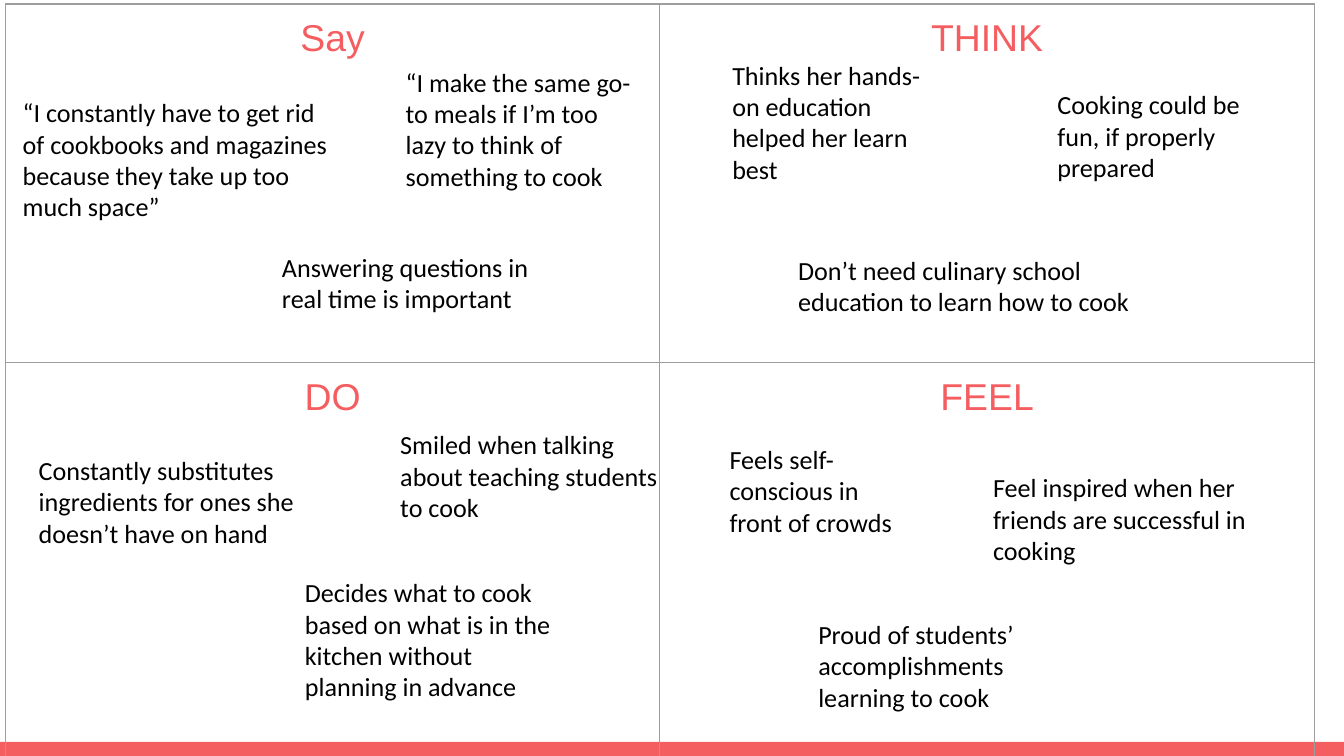
from lxml.etree import SubElement
from pptx import Presentation
from pptx.dml.color import RGBColor
from pptx.enum.shapes import MSO_SHAPE as Shape
from pptx.enum.text import PP_ALIGN as Align
from pptx.oxml.ns import qn
from pptx.util import Inches, Pt

CORAL = RGBColor(0xF5, 0x5E, 0x61)
BLACK = RGBColor(0, 0, 0)
GREY = RGBColor(0x9E, 0x9E, 0x9E)

WIDTH = Inches(10)
HEIGHT = WIDTH * 9 // 16
COLUMN, ROW = WIDTH / 100, HEIGHT / 56.25
MARGIN = Inches(0.1)
MAP_LEFT, MAP_TOP = 0.4, 0.3
MAP_COLUMNS = (48.7, 48.7)
MAP_ROWS = (26.7, 29.8)

QUADRANTS = [
    [
        ("Say", [
            ((19.6, 17.4, 20.7, 6.5), "Answering questions in real time is important"),
            ((0.3, 5.9, 25.2, 11), "“I constantly have to get rid of cookbooks and magazines "
             "because they take up too much space”"),
            ((28.8, 3.6, 19, 6.5), "“I make the same go-to meals if I’m too lazy to think of "
             "something to cook"),
        ]),
        ("THINK", [
            ((9.3, 17.6, 30.7, 8), "Don’t need culinary school education to learn how to cook"),
            ((28.6, 5.3, 19, 3.3), "Cooking could be fun, if properly prepared"),
            ((4.4, 3.1, 16.8, 8), "Thinks her hands-on education helped her learn best"),
        ]),
    ],
    [
        ("DO", [
            ((28.4, 3.9, 21.7, 9.7), "Smiled when talking about teaching students to cook"),
            ((21.3, 14.9, 20.7, 14.4), "Decides what to cook based on what is in the kitchen "
             "without planning in advance"),
            ((1.5, 5.8, 22.6, 9.7), "Constantly substitutes ingredients for ones she doesn’t "
             "have on hand"),
        ]),
        ("FEEL", [
            ((23.8, 7.1, 25.2, 9.7), "Feel inspired when her friends are successful in cooking"),
            ((10.8, 18, 20.7, 9.7), "Proud of students’ accomplishments learning to cook"),
            ((4.2, 5, 15.3, 8), "Feels self-conscious in front of crowds"),
        ]),
    ],
]


def grid_box(left, top, width, height):
    return (round(left * COLUMN), round(top * ROW),
            round(width * COLUMN), round(height * ROW))


def set_margins(holder):
    holder.margin_left = holder.margin_right = MARGIN
    holder.margin_top = holder.margin_bottom = MARGIN


def style_font(font, name, size, color):
    font.name = name
    font.size = Pt(size)
    font.color.rgb = color


def add_footer(slide, box):
    shape = slide.shapes.add_shape(Shape.RECTANGLE, *grid_box(*box))
    shape.shadow.inherit = False
    shape.fill.solid()
    shape.fill.fore_color.rgb = CORAL
    shape.line.fill.background()


def add_borders(cell):
    properties = cell._tc.get_or_add_tcPr()
    for side in ("lnL", "lnR", "lnT", "lnB"):
        line = SubElement(properties, qn(f"a:{side}"), w=str(Pt(0.75)))
        fill = SubElement(line, qn("a:solidFill"))
        SubElement(fill, qn("a:srgbClr"), val=str(GREY))


def format_heading(cell, heading):
    add_borders(cell)
    cell.fill.background()
    set_margins(cell)
    cell.text = heading
    paragraph = cell.text_frame.paragraphs[0]
    paragraph.alignment = Align.CENTER
    style_font(paragraph.font, "Arial", 20, CORAL)


def add_map_table(slide, left, top):
    box = grid_box(left, top, sum(MAP_COLUMNS), sum(MAP_ROWS))
    table = slide.shapes.add_table(len(MAP_ROWS), len(MAP_COLUMNS), *box).table
    table.first_row = table.horz_banding = False
    for column, width in zip(table.columns, MAP_COLUMNS):
        column.width = round(width * COLUMN)
    for row, height, quadrants in zip(table.rows, MAP_ROWS, QUADRANTS):
        row.height = round(height * ROW)
        for cell, (heading, _) in zip(row.cells, quadrants):
            format_heading(cell, heading)


def add_notes(slide, left, top, notes):
    for (x, y, width, height), text in notes:
        box = grid_box(left + x, top + y, width, height)
        frame = slide.shapes.add_textbox(*box).text_frame
        frame.word_wrap = True
        set_margins(frame)
        paragraph = frame.paragraphs[0]
        paragraph.text = text
        style_font(paragraph.font, "Calibri", 14, BLACK)


def add_empathy_map(slide, left, top):
    add_map_table(slide, left, top)
    for r, quadrants in enumerate(QUADRANTS):
        for c, (_, notes) in enumerate(quadrants):
            add_notes(slide, left + sum(MAP_COLUMNS[:c]), top + sum(MAP_ROWS[:r]), notes)


def main():
    presentation = Presentation()
    presentation.slide_width, presentation.slide_height = WIDTH, HEIGHT
    slide = presentation.slides.add_slide(presentation.slide_layouts[6])
    add_footer(slide, (0, 55.2, 100, 1.1))
    add_empathy_map(slide, MAP_LEFT, MAP_TOP)
    presentation.save("out.pptx")


if __name__ == "__main__":
    main()
